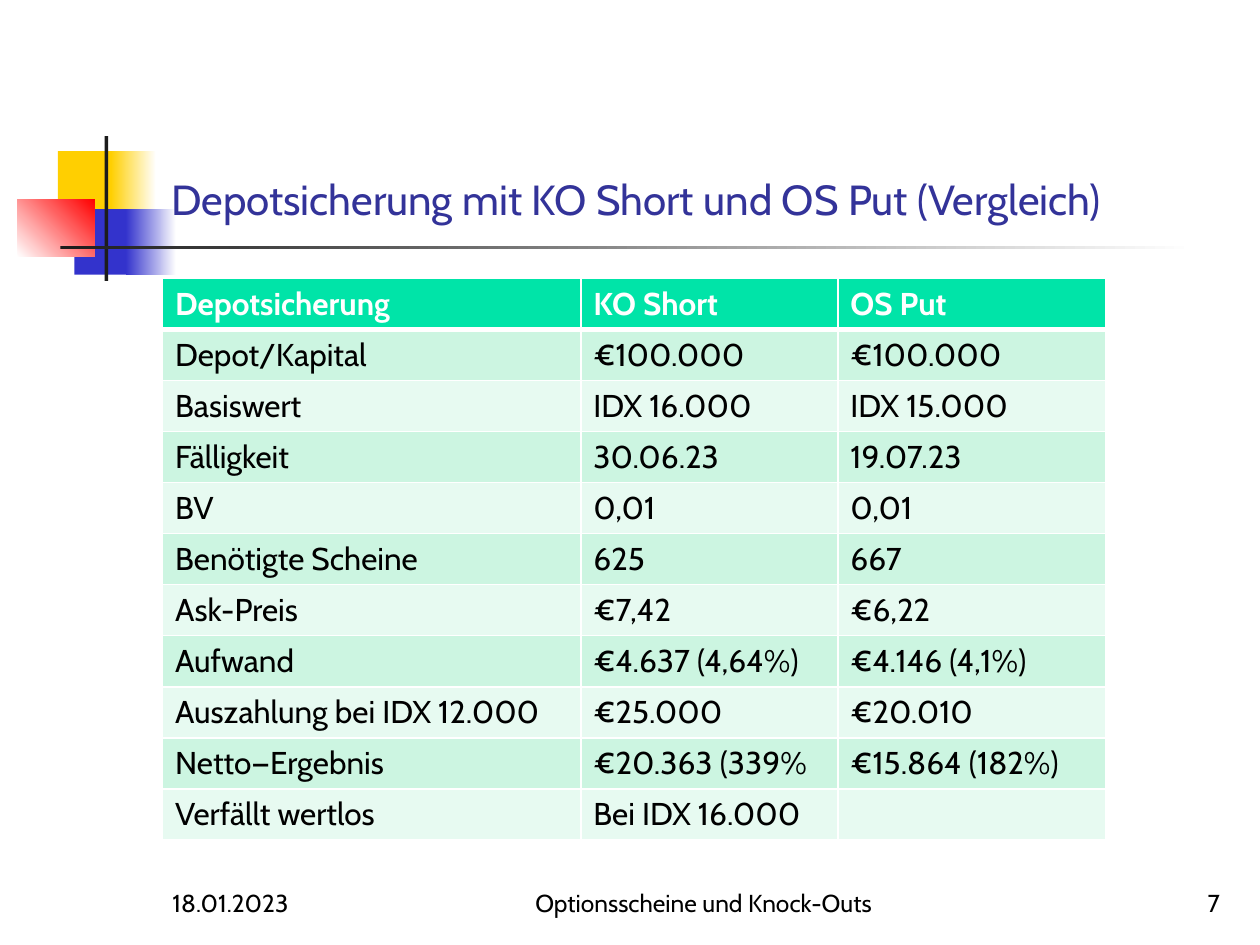
from dataclasses import dataclass

import pptx
import pptx.dml.color
import pptx.enum.shapes
import pptx.enum.text
import pptx.oxml
import pptx.oxml.ns
import pptx.util
from pptx.util import Inches

FONT = "Cabin"
COLORS = {
    "white": "FFFFFF", "black": "000000", "ink": "1C1C1C",
    "yellow": "FFCF01", "blue": "3333CC", "red": "FF0000",
    "title": "333399", "header": "00E4A8",
    "band_dark": "CCF5E1", "band_light": "E7FAF1",
}
ALIGN = pptx.enum.text.PP_ALIGN
BOTTOM = pptx.enum.text.MSO_ANCHOR.BOTTOM


@dataclass
class Block:
    """Decorative rectangle; fades from color to end if end is set."""
    left: float
    top: float
    width: float
    height: float
    color: str
    end: str = ""
    angle: int = 0


@dataclass
class FooterText:
    left: float
    width: float
    text: str
    align: ALIGN


BLOCKS = [
    Block(0.46, 1.2, 0.48, 0.52, "yellow"),
    Block(0.88, 1.2, 0.36, 0.52, "yellow", "white"),
    Block(0.59, 1.66, 0.46, 0.52, "blue"),
    Block(1, 1.66, 0.4, 0.52, "blue", "white"),
    Block(0.14, 1.58, 0.61, 0.46, "white", "red", 45),
    Block(0.83, 1.08, 0.03, 1.15, "ink"),
    Block(0.48, 1.95, 9, 0.03, "ink", "white"),
]
FOOTERS = [
    FooterText(1.27, 2.08, "18.01.2023", ALIGN.LEFT),
    FooterText(4, 3.17, "Optionsscheine und Knock-Outs", ALIGN.CENTER),
    FooterText(7.7, 2.08, "7", ALIGN.RIGHT),
]
COLUMN_WIDTHS = [3.32, 2.04, 2.13]
TABLE_HEIGHT = 4.46
ROWS = [
    ("Depotsicherung", "KO Short", "OS Put"),
    ("Depot/Kapital", "€100.000", "€100.000"),
    ("Basiswert", "IDX 16.000", "IDX 15.000"),
    ("Fälligkeit", "30.06.23", "19.07.23"),
    ("BV", "0,01", "0,01"),
    ("Benötigte Scheine", "625", "667"),
    ("Ask-Preis", "€7,42", "€6,22"),
    ("Aufwand", "€4.637 (4,64%)", "€4.146 (4,1%)"),
    ("Auszahlung bei IDX 12.000", "€25.000", "€20.010"),
    ("Netto—Ergebnis", "€20.363 (339%", "€15.864 (182%)"),
    ("Verfällt wertlos", "Bei IDX 16.000", ""),
]


def rgb(name: str) -> pptx.dml.color.RGBColor:
    return pptx.dml.color.RGBColor.from_string(COLORS[name])


def format_text(tf, size: int, color: str, bold: bool = False,
                align: ALIGN = ALIGN.LEFT) -> None:
    for p in tf.paragraphs:
        p.alignment = align
        for r in p.runs:
            r.font.name = FONT
            r.font.size = pptx.util.Pt(size)
            r.font.bold = bold
            r.font.color.rgb = rgb(color)


def add_block(s, block: Block) -> None:
    sp = s.shapes.add_shape(
        pptx.enum.shapes.MSO_SHAPE.RECTANGLE, Inches(block.left),
        Inches(block.top), Inches(block.width), Inches(block.height))
    sp.shadow.inherit = False
    sp.line.fill.background()
    if block.end:
        sp.fill.gradient()
        sp.fill.gradient_angle = block.angle
        for stop, color in zip(sp.fill.gradient_stops, (block.color, block.end)):
            stop.color.rgb = rgb(color)
    else:
        sp.fill.solid()
        sp.fill.fore_color.rgb = rgb(block.color)


def add_footer(s, footer: FooterText) -> None:
    sp = s.shapes.add_textbox(Inches(footer.left), Inches(6.83),
                              Inches(footer.width), Inches(0.5))
    tf = sp.text_frame
    tf.word_wrap = True
    tf.vertical_anchor = BOTTOM
    tf.text = footer.text
    format_text(tf, 14, "black", align=footer.align)


def set_borders(cell, top: float, bottom: float) -> None:
    tc_pr = cell._tc.get_or_add_tcPr()
    widths = {"lnL": 1, "lnR": 1, "lnT": top, "lnB": bottom}
    for i, (side, width) in enumerate(widths.items()):
        # Borders have to come before the cell fill
        tc_pr.insert(i, pptx.oxml.parse_xml(
            f'<a:{side} {pptx.oxml.ns.nsdecls("a")} w="{pptx.util.Pt(width)}">'
            f'<a:solidFill><a:srgbClr val="{COLORS["white"]}"/></a:solidFill>'
            f'</a:{side}>'))


def add_comparison(s) -> None:
    table = s.shapes.add_table(
        len(ROWS), len(COLUMN_WIDTHS), Inches(1.29), Inches(2.21),
        Inches(sum(COLUMN_WIDTHS)), Inches(TABLE_HEIGHT)).table
    for column, width in zip(table.columns, COLUMN_WIDTHS):
        column.width = Inches(width)
    for i, values in enumerate(ROWS):
        header = i == 0
        band = "header" if header else "band_dark" if i % 2 else "band_light"
        for j, value in enumerate(values):
            cell = table.cell(i, j)
            cell.text_frame.text = value
            format_text(cell.text_frame, 18, "white" if header else "black", header)
            cell.fill.solid()
            cell.fill.fore_color.rgb = rgb(band)
            set_borders(cell, top=3 if i == 1 else 1, bottom=3 if header else 1)


def main() -> None:
    prs = pptx.Presentation()
    prs.slide_width, prs.slide_height = Inches(10), Inches(7.5)
    s = prs.slides.add_slide(prs.slide_layouts[5])

    # Corner decoration
    for block in BLOCKS:
        add_block(s, block)

    # Title, brought in front of the decoration
    title = s.shapes.title
    title.left, title.top = Inches(1.26), Inches(0.23)
    title.width, title.height = Inches(8.52), Inches(1.6)
    tf = title.text_frame
    tf.text = "Depotsicherung mit KO Short und OS Put (Vergleich)"
    tf.vertical_anchor = BOTTOM
    format_text(tf, 24, "title")
    s.shapes._spTree.append(title._element)

    # Footer line and table
    for footer in FOOTERS:
        add_footer(s, footer)
    add_comparison(s)
    prs.save("out.pptx")


if __name__ == "__main__":
    main()
